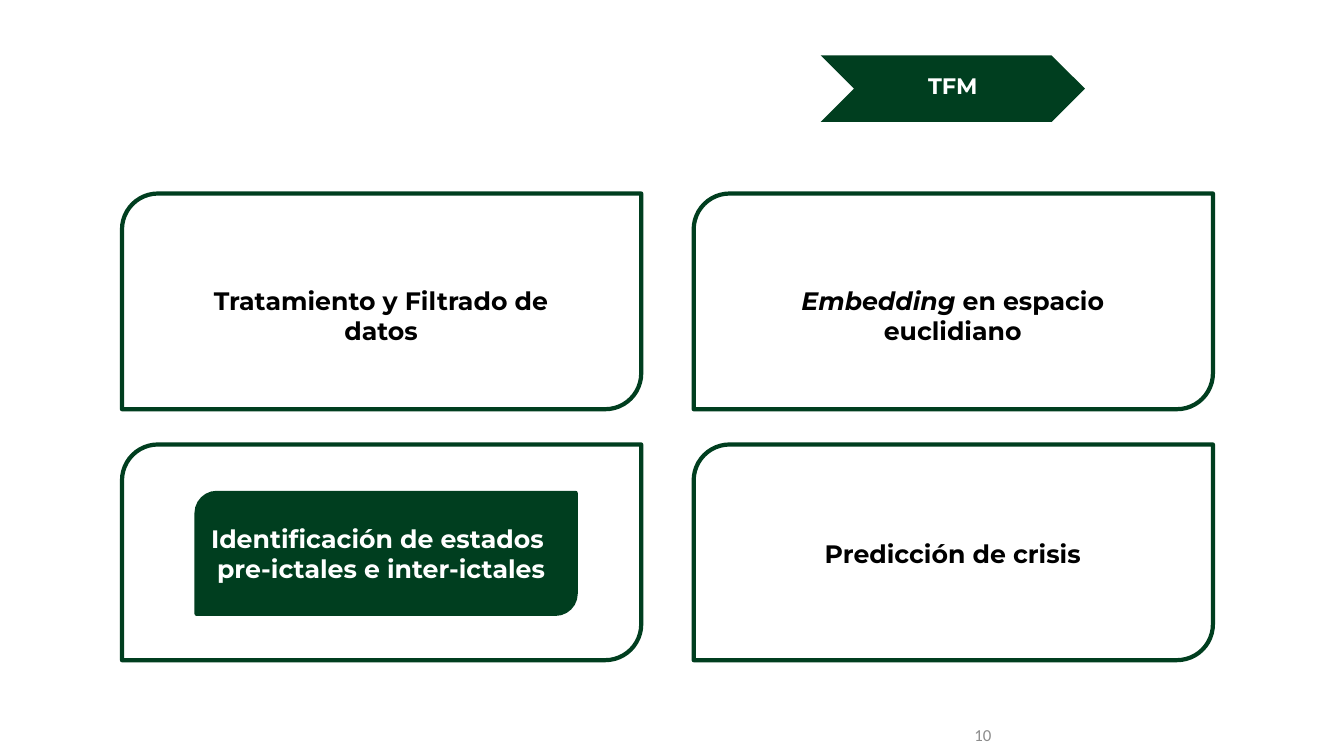
import dataclasses
import typing

import pptx
import pptx.dml.color
import pptx.enum.shapes
import pptx.enum.text
import pptx.util

SCALE = 9144
GREEN = "003E1F"
WHITE = "FFFFFF"
BLACK = "000000"
GREY = "8C8C8C"
KIND = pptx.enum.shapes.MSO_SHAPE
ALIGN = pptx.enum.text.PP_ALIGN
ANCHOR = pptx.enum.text.MSO_ANCHOR


@dataclasses.dataclass
class Box:
    left: int
    top: int
    width: int
    height: int

    def emu(self) -> list[int]:
        return [n * SCALE for n in (self.left, self.top, self.width, self.height)]


@dataclasses.dataclass
class Run:
    text: str
    slant: bool = False


@dataclasses.dataclass
class Label:
    box: Box
    lines: list[list[Run]]
    size: int = 18
    hue: str = BLACK
    face: str = "Montserrat"
    bold: bool = True
    align: ALIGN = ALIGN.CENTER
    anchor: ANCHOR = ANCHOR.TOP


def paint(target: typing.Any, hue: str) -> None:
    target.rgb = pptx.dml.color.RGBColor.from_string(hue)


def draw_shape(slide: typing.Any, kind: KIND, box: Box, fill: bool, line: bool) -> None:
    shape = slide.shapes.add_shape(kind, *box.emu())
    shape.shadow.inherit = False
    if fill:
        shape.fill.solid()
        paint(shape.fill.fore_color, GREEN)
    else:
        shape.fill.background()
    if line:
        shape.line.width = pptx.util.Pt(3)
        paint(shape.line.color, GREEN)
    else:
        shape.line.fill.background()


def draw_label(slide: typing.Any, label: Label) -> None:
    frame = slide.shapes.add_textbox(*label.box.emu()).text_frame
    frame.word_wrap = True
    frame.vertical_anchor = label.anchor
    for index, line in enumerate(label.lines):
        para = frame.add_paragraph() if index else frame.paragraphs[0]
        para.alignment = label.align
        for part in line:
            run = para.add_run()
            run.text = part.text
            run.font.name = label.face
            run.font.size = pptx.util.Pt(label.size)
            run.font.bold = label.bold
            run.font.italic = part.slant
            paint(run.font.color, label.hue)


LABELS = [
    Label(Box(848, 67, 194, 37), [[Run("TFM")]], size=16, hue=WHITE),
    Label(Box(175, 278, 406, 71), [[Run("Tratamiento y Filtrado de datos")]]),
    Label(
        Box(725, 278, 440, 71),
        [[Run("Embedding", slant=True), Run(" en espacio euclidiano")]],
    ),
    Label(
        Box(175, 514, 406, 71),
        [[Run("Identificación de estados ")], [Run("pre-ictales e inter-ictales")]],
        hue=WHITE,
    ),
    Label(Box(725, 529, 440, 40), [[Run("Predicción de crisis")]]),
    Label(
        Box(892, 709, 101, 40),
        [[Run("10")]],
        size=12,
        hue=GREY,
        face="Calibri",
        bold=False,
        align=ALIGN.RIGHT,
        anchor=ANCHOR.MIDDLE,
    ),
]


def main() -> None:
    deck = pptx.Presentation()
    deck.slide_width = 1333 * SCALE
    deck.slide_height = 750 * SCALE
    slide = deck.slides.add_slide(deck.slide_layouts[6])
    draw_shape(slide, KIND.ROUND_2_DIAG_RECTANGLE, Box(195, 489, 376, 120), True, True)
    draw_shape(slide, KIND.CHEVRON, Box(814, 55, 262, 66), True, False)
    for top in (192, 441):
        for left in (121, 688):
            card = Box(left, top, 515, 214)
            draw_shape(slide, KIND.ROUND_2_DIAG_RECTANGLE, card, False, True)
    for label in LABELS:
        draw_label(slide, label)
    deck.save("out.pptx")


if __name__ == "__main__":
    main()
